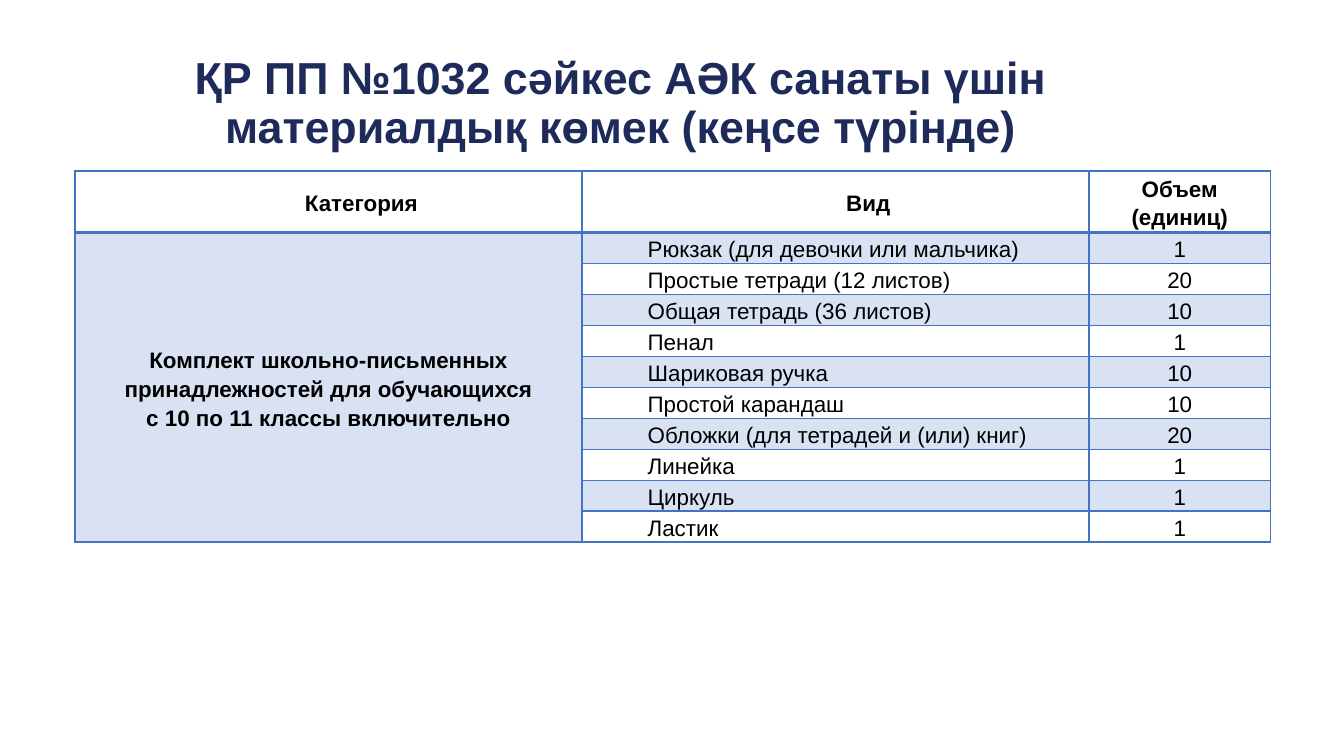
from lxml.etree import SubElement
from pptx import Presentation
from pptx.dml.color import RGBColor
from pptx.enum.text import MSO_ANCHOR as Anchor, PP_ALIGN as Align
from pptx.oxml.ns import qn
from pptx.util import Cm, Pt

NAVY = RGBColor(0x1E, 0x2A, 0x5A)
BLUE = RGBColor(0x44, 0x72, 0xC4)
BLACK = RGBColor(0, 0, 0)

TITLE = "ҚР ПП №1032 сәйкес АӘК санаты үшін материалдық көмек (кеңсе түрінде)"
HEADINGS = ["Категория", "Вид", "Объем\n(единиц)"]
CATEGORY = [
    "Комплект школьно-письменных принадлежностей для обучающихся",
    "с 10 по 11 классы включительно",
]
SUPPLIES = [
    ("Рюкзак (для девочки или мальчика)", 1),
    ("Простые тетради (12 листов)", 20),
    ("Общая тетрадь (36 листов)", 10),
    ("Пенал", 1),
    ("Шариковая ручка", 10),
    ("Простой карандаш", 10),
    ("Обложки (для тетрадей и (или) книг)", 20),
    ("Линейка", 1),
    ("Циркуль", 1),
    ("Ластик", 1),
]
COLUMN_WIDTHS = [Cm(9.58), Cm(9.58), Cm(3.43)]
HEADER_HEIGHT, ROW_HEIGHT = Cm(1.09), Cm(0.56)
FIRST_LINE = Cm(1.24)
SIDE_MARGIN = Cm(0.08)

TITLE_FORMAT = {"alignment": Align.CENTER, "line_spacing": 0.9}
CENTERED = {"alignment": Align.CENTER, "line_spacing": 1.15}
COUNT_FORMAT = {**CENTERED, "space_after": Pt(1)}
SUPPLY_FORMAT = {**COUNT_FORMAT, "alignment": Align.JUSTIFY}


class SlideBuilder:
    font_name = "Arial"

    def __init__(self, slide):
        self.slide = slide

    def paragraphs(self, frame, lines, layout, size=12, bold=False, color=BLACK, indent=0):
        """Put each line into the frame as a formatted paragraph."""
        for number, line in enumerate(lines):
            paragraph = frame.add_paragraph() if number else frame.paragraphs[0]
            paragraph.text = line
            for name, value in layout.items():
                setattr(paragraph, name, value)
            if indent:
                properties = paragraph._p.get_or_add_pPr()
                properties.set("marL", "0")
                properties.set("indent", str(indent))
            for run in paragraph.runs:
                font_format = {"name": self.font_name, "size": Pt(size), "bold": bold}
                for name, value in font_format.items():
                    setattr(run.font, name, value)
                run.font.color.rgb = color

    def title(self, text, left, top, width, height):
        frame = self.slide.shapes.add_textbox(left, top, width, height).text_frame
        frame.word_wrap = True
        frame.vertical_anchor = Anchor.MIDDLE
        self.paragraphs(frame, [text], TITLE_FORMAT, size=24, bold=True, color=NAVY)

    def table(self, left, top, row_heights, column_widths):
        """Add a plain table with every cell bordered and every other body row tinted."""
        table = self.slide.shapes.add_table(
            len(row_heights), len(column_widths), left, top,
            sum(column_widths), sum(row_heights)).table
        table.first_row = table.horz_banding = False
        for column, width in zip(table.columns, column_widths):
            column.width = width
        for row_number, (row, height) in enumerate(zip(table.rows, row_heights)):
            row.height = height
            for column_number, cell in enumerate(row.cells):
                margin = 0 if column_number == 1 else SIDE_MARGIN
                cell_format = {"margin_left": margin, "margin_right": margin,
                               "margin_top": 0, "margin_bottom": 0,
                               "vertical_anchor": Anchor.MIDDLE}
                for name, value in cell_format.items():
                    setattr(cell, name, value)
                self.borders(cell, top=2 if row_number == 1 else 1,
                             bottom=2 if row_number == 0 else 1)
                in_category = row_number > 0 and column_number == 0
                self.fill(cell, tinted=in_category or row_number % 2 == 1)
        return table

    def borders(self, cell, top, bottom):
        properties = cell._tc.get_or_add_tcPr()
        for side, width in {"L": 1, "R": 1, "T": top, "B": bottom}.items():
            line = SubElement(properties, qn(f"a:ln{side}"), w=str(Pt(width)))
            solid = SubElement(line, qn("a:solidFill"))
            SubElement(solid, qn("a:srgbClr"), val=str(BLUE))

    def fill(self, cell, tinted):
        """Fill the cell with 20 % blue, or leave it clear."""
        if not tinted:
            cell.fill.background()
            return
        cell.fill.solid()
        cell.fill.fore_color.rgb = BLUE
        color = cell._tc.tcPr.find(f"{qn('a:solidFill')}/{qn('a:srgbClr')}")
        SubElement(color, qn("a:alpha"), val="20000")


def main():
    deck = Presentation()
    deck.slide_width, deck.slide_height = Cm(25.4), Cm(14.29)
    builder = SlideBuilder(deck.slides.add_slide(deck.slide_layouts[6]))
    builder.title(TITLE, Cm(0.89), Cm(1.3), Cm(21.67), Cm(1.35))

    row_heights = [HEADER_HEIGHT] + [ROW_HEIGHT] * len(SUPPLIES)
    kit = builder.table(Cm(1.42), Cm(3.23), row_heights, COLUMN_WIDTHS)
    for column, (heading, indent) in enumerate(zip(HEADINGS, [FIRST_LINE, FIRST_LINE, 0])):
        builder.paragraphs(kit.cell(0, column).text_frame, [heading], CENTERED,
                           bold=True, indent=indent)
    category = kit.cell(1, 0)
    category.merge(kit.cell(len(SUPPLIES), 0))
    builder.paragraphs(category.text_frame, CATEGORY, CENTERED, bold=True)
    for row, (supply, count) in enumerate(SUPPLIES, start=1):
        builder.paragraphs(kit.cell(row, 1).text_frame, [supply], SUPPLY_FORMAT,
                           indent=FIRST_LINE)
        builder.paragraphs(kit.cell(row, 2).text_frame, [str(count)], COUNT_FORMAT)

    deck.save("out.pptx")


if __name__ == "__main__":
    main()
